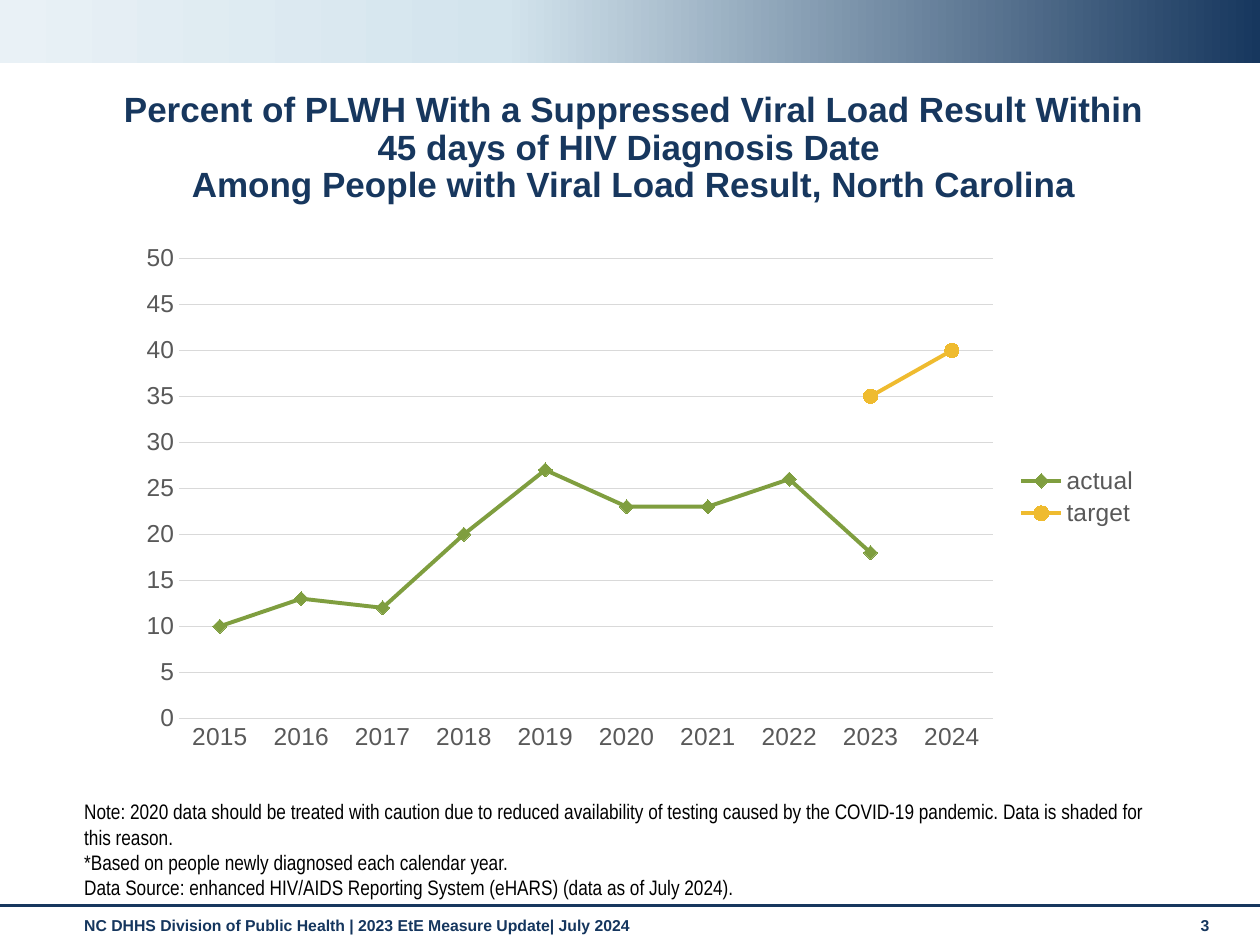
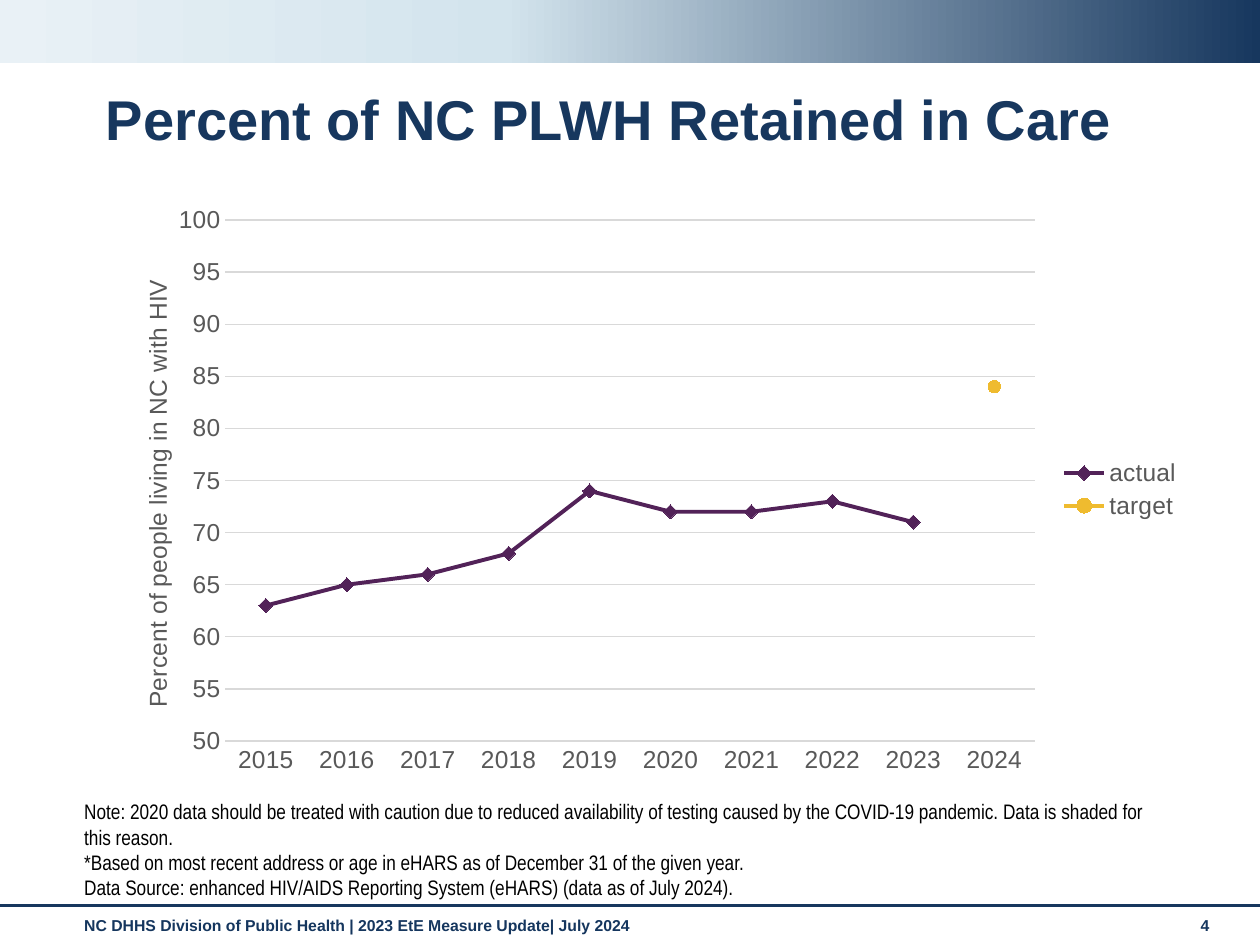
"""Build two slides of HIV care measures for North Carolina, each with a line chart."""
import copy
from dataclasses import dataclass
from typing import Optional

import lxml.etree
import pptx
import pptx.chart.data
import pptx.dml.color
import pptx.enum.chart
import pptx.enum.shapes
import pptx.enum.text
import pptx.oxml.ns
import pptx.util

SLIDE_WIDTH = pptx.util.Inches(10)
SLIDE_HEIGHT = pptx.util.Inches(7.5)
NAVY, FOOTER_NAVY, BLACK = "17375E", "15365E", "000000"
GREEN, PURPLE, GOLD = "7F9E3F", "522258", "EFBB2F"
AXIS_GRAY, GRID_GRAY = "595959", "D9D9D9"
BAND_STOPS = [(0, NAVY), (0.6, "D3E4ED"), (1, "E9F1F6")]
FOOTER = "NC DHHS Division of Public Health | 2023 EtE Measure Update| July 2024"
CAUTION = ("Note: 2020 data should be treated with caution due to reduced availability of testing "
           "caused by the COVID-19 pandemic. Data is shaded for this reason.")
DATA_SOURCE = "Data Source: enhanced HIV/AIDS Reporting System (eHARS) (data as of July 2024)."
YEARS = [str(year) for year in range(2015, 2025)]


@dataclass(frozen=True)
class Area:
    left: float
    top: float
    width: float
    height: float

    def on_slide(self) -> tuple[int, int, int, int]:
        return (int(SLIDE_WIDTH * self.left / 100), int(SLIDE_HEIGHT * self.top / 100),
                int(SLIDE_WIDTH * self.width / 100), int(SLIDE_HEIGHT * self.height / 100))


@dataclass(frozen=True)
class Style:
    size: float
    color: str
    bold: bool = False
    family: str = "Arial"


@dataclass(frozen=True)
class Measure:
    page: int
    title: str
    title_size: int
    title_align: pptx.enum.text.PP_ALIGN
    basis: str
    chart_area: Area
    plot_area: Area
    low: int
    high: int
    actual: list[Optional[int]]
    target: list[Optional[int]]
    actual_color: str
    target_marker: int
    axis_title: str = ""


BAND = Area(0, 0, 100, 6.67)
RULE = Area(0, 95.87, 100, 0)
TITLE = Area(7.4, 9.07, 85.8, 8)
NOTES = Area(5.7, 91.07, 87.4, 4.8)
FOOTER_AREA = Area(5.7, 96.27, 87.4, 3.87)
PAGE_AREA = Area(94.3, 96.27, 4.4, 4)
AXIS_TITLE = Area(4, 13.7, 0, 0)
FOOTER_STYLE = Style(9, FOOTER_NAVY, True)
NOTE_STYLE = Style(12, BLACK, family="Arial Narrow")
CHART_STYLE = Style(14, AXIS_GRAY)

MEASURES = [
    Measure(3, "Percent of PLWH With a Suppressed Viral Load Result Within 45 days of HIV Diagnosis Date \v"
            "Among People with Viral Load Result, North Carolina", 20, pptx.enum.text.PP_ALIGN.CENTER,
            "*Based on people newly diagnosed each calendar year.",
            Area(10, 24.67, 81.4, 55.87), Area(5.2, 4.8, 79.3, 87.1), 0, 50,
            [10, 13, 12, 20, 27, 23, 23, 26, 18, None], [None] * 8 + [35, 40], GREEN, 8),
    Measure(4, "Percent of NC PLWH Retained in Care", 32, pptx.enum.text.PP_ALIGN.LEFT,
            "*Based on most recent address or age in eHARS as of December 31 of the given year.",
            Area(7.4, 20.53, 87.4, 62.53), Area(12, 4.4, 73.5, 88.2), 50, 100,
            [63, 65, 66, 68, 74, 72, 72, 73, 71, None], [None] * 9 + [84], PURPLE, 7,
            "Percent of people living in NC with HIV"),
]


def rgb(value: str) -> pptx.dml.color.RGBColor:
    return pptx.dml.color.RGBColor.from_string(value)


def set_font(font, style: Style) -> None:
    font.name, font.size, font.bold = style.family, pptx.util.Pt(style.size), style.bold
    font.color.rgb = rgb(style.color)


def set_line(line, color: str, width: float) -> None:
    line.color.rgb = rgb(color)
    line.width = pptx.util.Pt(width)


def write(holder, lines: list[str], style: Style,
          anchor=pptx.enum.text.MSO_ANCHOR.TOP,
          align=pptx.enum.text.PP_ALIGN.LEFT, spacing: float = 1) -> None:
    frame = holder.text_frame
    frame.text = "\n".join(lines)
    frame.word_wrap = True
    frame.auto_size = pptx.enum.text.MSO_AUTO_SIZE.NONE
    frame.vertical_anchor = anchor
    for paragraph in frame.paragraphs:
        paragraph.alignment, paragraph.line_spacing = align, spacing
        for run in paragraph.runs:
            set_font(run.font, style)


def draw_band(slide) -> None:
    band = slide.shapes.add_shape(pptx.enum.shapes.MSO_SHAPE.RECTANGLE, *BAND.on_slide())
    band.shadow.inherit = False
    band.line.fill.background()
    band.fill.gradient()
    band.fill.gradient_angle = 180
    stop_list = band.element.spPr.find(".//" + pptx.oxml.ns.qn("a:gsLst"))
    stop_list.append(copy.deepcopy(stop_list[0]))
    for stop, (position, color) in zip(band.fill.gradient_stops, BAND_STOPS):
        stop.position, stop.color.rgb = position, rgb(color)


def draw_rule(slide) -> None:
    left, top, width, height = RULE.on_slide()
    rule = slide.shapes.add_connector(pptx.enum.shapes.MSO_CONNECTOR.STRAIGHT,
                                      left, top, left + width, top + height)
    set_line(rule.line, NAVY, 1.75)
    lxml.etree.SubElement(rule.element.spPr, pptx.oxml.ns.qn("a:effectLst"))


def place(part, index: int, area: Area, inner: bool = False) -> None:
    qn = pptx.oxml.ns.qn
    for previous in part.findall(qn("c:layout")):
        part.remove(previous)
    layout = lxml.etree.Element(qn("c:layout"))
    manual = lxml.etree.SubElement(layout, qn("c:manualLayout"))
    settings = [("layoutTarget", "inner")] if inner else []
    settings += [("xMode", "edge"), ("yMode", "edge"), ("x", area.left / 100), ("y", area.top / 100)]
    if inner:
        settings += [("w", area.width / 100), ("h", area.height / 100)]
    for tag, value in settings:
        lxml.etree.SubElement(manual, qn("c:" + tag)).set("val", str(value))
    part.insert(index, layout)


def style_series(series, color: str, shape, size: int) -> None:
    series.smooth = False
    set_line(series.format.line, color, 2.25)
    series.marker.style, series.marker.size = shape, size
    series.marker.format.fill.solid()
    series.marker.format.fill.fore_color.rgb = rgb(color)
    series.marker.format.line.fill.background()


def title_axis(axis, text: str) -> None:
    frame = axis.axis_title.text_frame
    frame.text = text
    set_font(frame.paragraphs[0].runs[0].font, CHART_STYLE)
    title = axis.axis_title._element
    body = title.find(".//" + pptx.oxml.ns.qn("a:bodyPr"))
    body.set("rot", "-5400000")
    body.set("vert", "horz")
    place(title, 1, AXIS_TITLE)


def draw_chart(slide, measure: Measure) -> None:
    data = pptx.chart.data.CategoryChartData(number_format="0")
    data.categories = YEARS
    data.add_series("actual", measure.actual)
    data.add_series("target", measure.target)
    chart = slide.shapes.add_chart(pptx.enum.chart.XL_CHART_TYPE.LINE_MARKERS,
                                   *measure.chart_area.on_slide(), data).chart
    set_font(chart.font, CHART_STYLE)
    chart.has_title = False
    chart.has_legend = True
    chart.legend.position = pptx.enum.chart.XL_LEGEND_POSITION.RIGHT
    chart.legend.include_in_layout = False
    set_font(chart.legend.font, CHART_STYLE)
    chart.plots[0].vary_by_categories = False
    years, percents = chart.category_axis, chart.value_axis
    for axis in (years, percents):
        axis.major_tick_mark = axis.minor_tick_mark = pptx.enum.chart.XL_TICK_MARK.NONE
        set_font(axis.tick_labels.font, CHART_STYLE)
    set_line(years.format.line, GRID_GRAY, 0.75)
    percents.format.line.fill.background()
    percents.minimum_scale, percents.maximum_scale, percents.major_unit = measure.low, measure.high, 5
    percents.tick_labels.number_format = "0"
    percents.tick_labels.number_format_is_linked = False
    set_line(percents.major_gridlines.format.line, GRID_GRAY, 0.75)
    if measure.axis_title:
        title_axis(percents, measure.axis_title)
    actual, target = chart.plots[0].series
    markers = pptx.enum.chart.XL_MARKER_STYLE
    style_series(actual, measure.actual_color, markers.DIAMOND, 8)
    style_series(target, GOLD, markers.CIRCLE, measure.target_marker)
    place(chart._chartSpace.chart.plotArea, 0, measure.plot_area, inner=True)


def draw_measure(deck, measure: Measure) -> None:
    slide = deck.slides.add_slide(deck.slide_layouts[5])
    draw_band(slide)
    draw_rule(slide)
    heading = slide.shapes.title
    heading.left, heading.top, heading.width, heading.height = TITLE.on_slide()
    write(heading, [measure.title], Style(measure.title_size, NAVY, True),
          align=measure.title_align, spacing=0.9)
    for area, lines, style, anchor in (
            (FOOTER_AREA, [FOOTER], FOOTER_STYLE, pptx.enum.text.MSO_ANCHOR.TOP),
            (PAGE_AREA, [str(measure.page)], FOOTER_STYLE, pptx.enum.text.MSO_ANCHOR.TOP),
            (NOTES, [CAUTION, measure.basis, DATA_SOURCE], NOTE_STYLE, pptx.enum.text.MSO_ANCHOR.BOTTOM)):
        write(slide.shapes.add_textbox(*area.on_slide()), lines, style, anchor)
    draw_chart(slide, measure)


def main() -> None:
    deck = pptx.Presentation()
    deck.slide_width, deck.slide_height = SLIDE_WIDTH, SLIDE_HEIGHT
    for measure in MEASURES:
        draw_measure(deck, measure)
    deck.save("out.pptx")


if __name__ == "__main__":
    main()
